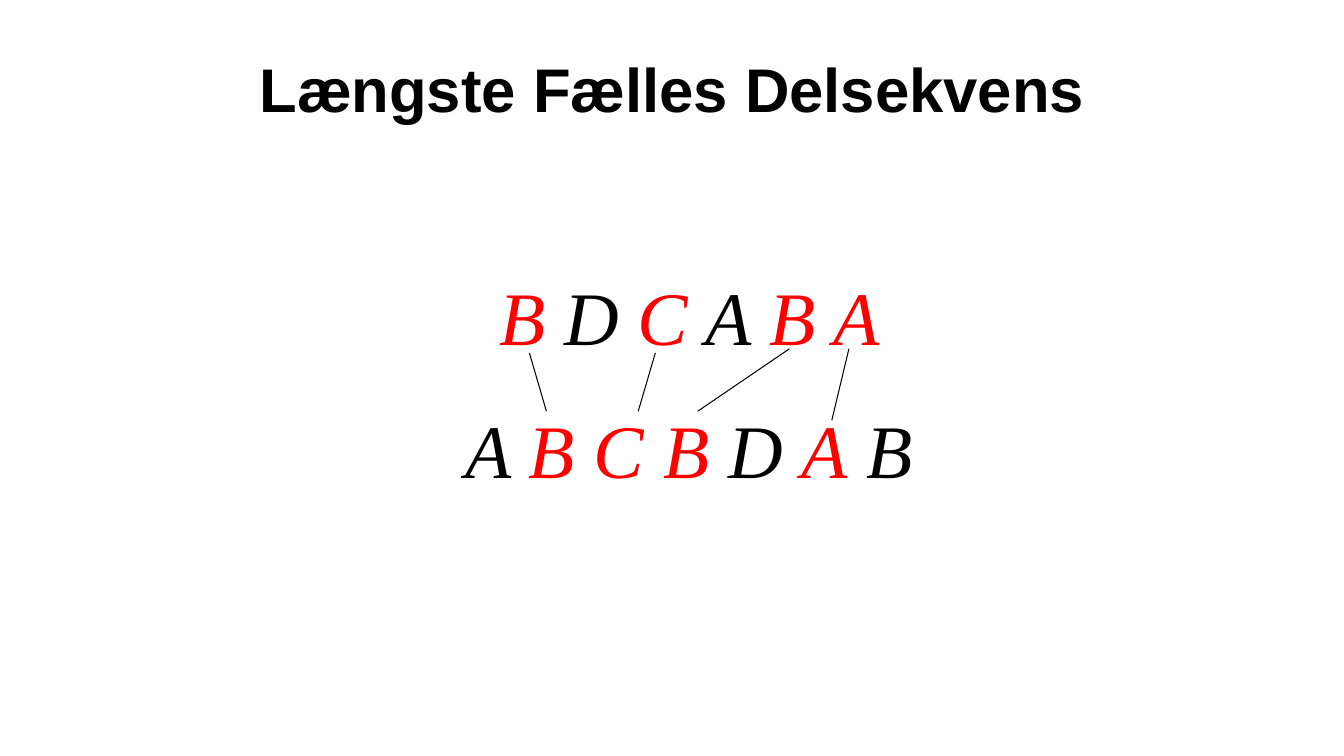
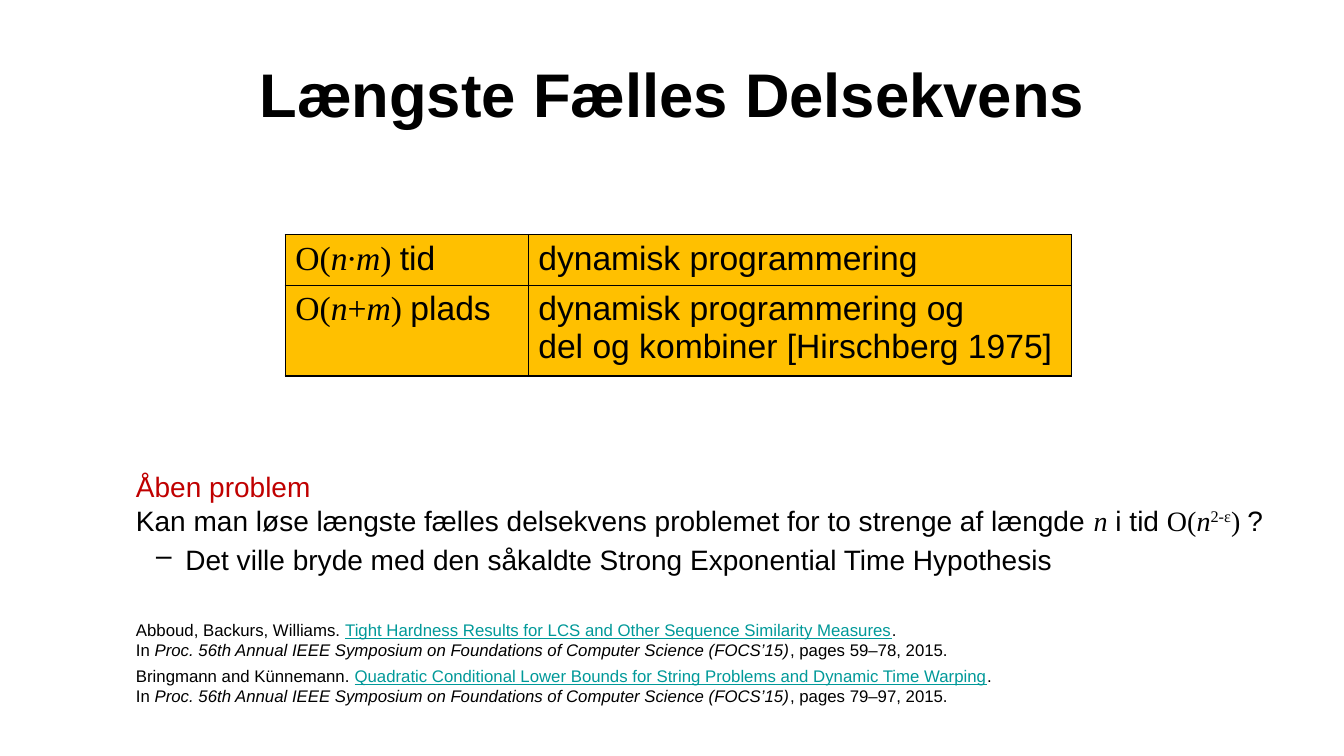
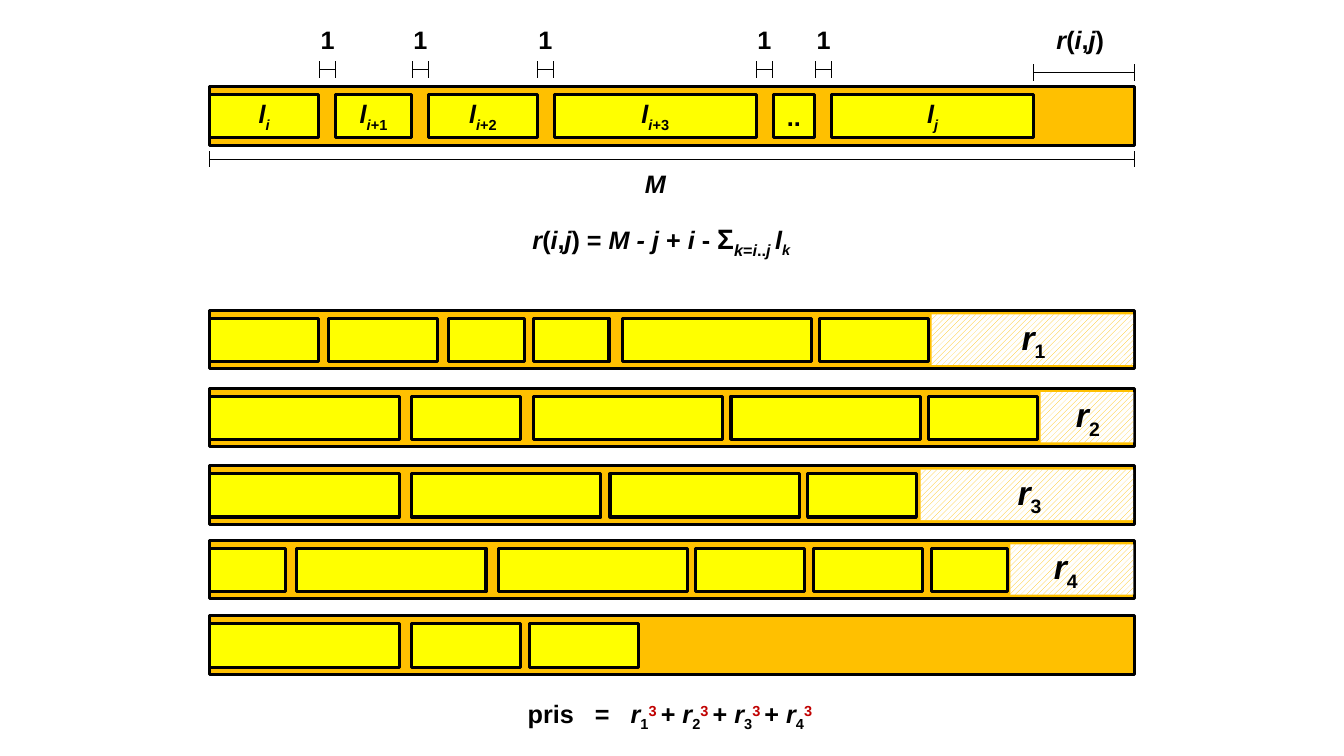
from copy import deepcopy

from lxml import etree
from pptx import Presentation
from pptx.dml.color import RGBColor
from pptx.enum.dml import MSO_PATTERN
from pptx.enum.shapes import MSO_CONNECTOR, MSO_SHAPE
from pptx.enum.text import MSO_ANCHOR, PP_ALIGN
from pptx.oxml.ns import qn
from pptx.util import Inches, Pt

RECTANGLE = MSO_SHAPE.RECTANGLE
STRAIGHT = MSO_CONNECTOR.STRAIGHT
HATCH = MSO_PATTERN.WIDE_UPWARD_DIAGONAL
LEFT, CENTER = PP_ALIGN.LEFT, PP_ALIGN.CENTER
TOP, MIDDLE = MSO_ANCHOR.TOP, MSO_ANCHOR.MIDDLE

BLACK, WHITE, RED, DARK_RED = "000000", "FFFFFF", "FF0000", "C00000"
ORANGE, YELLOW, TEAL = "FFC000", "FFFF00", "009999"
TITLE = "Længste Fælles Delsekvens"

# Each letter in the marks of a span switches on these format values
MARKS = {
    "b": {"bold": True},
    "i": {"italic": True},
    "u": {"underline": True},
    "t": {"name": "Times New Roman"},
    "r": {"color": RED},
    "d": {"color": DARK_RED},
    "l": {"color": TEAL},
    "_": {"baseline": -25000},
    "^": {"baseline": 30000},
    "w": {"spc": 1000},  # widens a single space
}


def rgb(value):
    return RGBColor.from_string(value)


class Slides:
    """The style of the deck and the slide being filled."""

    def __init__(self):
        self.deck = Presentation()
        self.deck.slide_width, self.deck.slide_height = Inches(13.33), Inches(7.5)
        self.page = None

    def new_page(self):
        self.page = self.deck.slides.add_slide(self.deck.slide_layouts[6])

    def add_spans(self, para, spans, size, marks=""):
        """Add spans, each a text or (text, marks); a newline is a line break."""
        for item in spans:
            text, extra = (item, "") if isinstance(item, str) else item
            values = {"name": "Arial", "size": Pt(size), "color": BLACK}
            for mark in marks + extra:
                values.update(MARKS[mark])
            for number, line in enumerate(text.split("\n")):
                if number:
                    para.add_line_break()
                    line_break = para._p[-1]
                span = para.add_run()
                span.text = line
                properties = span._r.get_or_add_rPr()
                for key, value in values.items():
                    if key == "color":
                        span.font.color.rgb = rgb(value)
                    elif key in ("baseline", "spc"):
                        properties.set(key, str(value))
                    else:
                        setattr(span.font, key, value)
                if number:
                    line_break.append(deepcopy(properties))
                if not line:
                    para._p.remove(span._r)

    def text(self, area, spans, size=18, marks="b", align=CENTER, anchor=TOP):
        box = self.page.shapes.add_textbox(*map(Inches, area))
        frame = box.text_frame
        frame.word_wrap, frame.vertical_anchor = True, anchor
        para = frame.paragraphs[0]
        para.alignment = align
        self.add_spans(para, spans, size, marks)
        return frame

    def add_para(self, frame, spans, size, marks="", align=LEFT, before=4):
        para = frame.add_paragraph()
        para.alignment, para.space_before = align, Pt(before)
        self.add_spans(para, spans, size, marks)
        return para

    def bullet(self, para, sign, indent, hanging):
        properties = para._p.get_or_add_pPr()
        properties.set("marL", str(Inches(indent)))
        properties.set("indent", str(-Inches(hanging)))
        etree.SubElement(properties, qn("a:buChar")).set("char", sign)

    def title(self, area):
        self.text(area, [TITLE], size=44, anchor=MIDDLE)

    def line(self, start, end):
        line = self.page.shapes.add_connector(STRAIGHT, *map(Inches, start + end))
        line.line.color.rgb, line.line.width = rgb(BLACK), Pt(0.75)
        etree.SubElement(line._element.spPr, qn("a:effectLst"))

    def bracket(self, left, right, middle):
        for x in (left, right):
            self.line((x, middle - 0.08), (x, middle + 0.08))
        self.line((left, middle), (right, middle))

    def block(self, area, color, spans=()):
        block = self.page.shapes.add_shape(RECTANGLE, *map(Inches, area))
        block.shadow.inherit = False
        block.fill.solid()
        block.fill.fore_color.rgb = rgb(color)
        block.line.color.rgb, block.line.width = rgb(BLACK), Pt(2.25)
        if spans:
            para = block.text_frame.paragraphs[0]
            para.alignment = CENTER
            self.add_spans(para, spans, 18, "b")

    def hatched(self, area):
        block = self.page.shapes.add_shape(RECTANGLE, *map(Inches, area))
        block.shadow.inherit = False
        block.fill.patterned()
        block.fill.pattern = HATCH
        block.fill.fore_color.rgb, block.fill.back_color.rgb = rgb(ORANGE), rgb(WHITE)
        block.line.fill.background()

    def table(self, left, top, widths, heights, rows):
        area = (left, top, sum(widths), sum(heights))
        table = self.page.shapes.add_table(
            len(rows), len(widths), *map(Inches, area)).table
        for column, width in zip(table.columns, widths):
            column.width = Inches(width)
        for row, height, contents in zip(table.rows, heights, rows):
            row.height = Inches(height)
            for cell, spans in zip(row.cells, contents):
                self.add_spans(cell.text_frame.paragraphs[0], spans, 24)
                self.borders(cell)
                cell.fill.solid()
                cell.fill.fore_color.rgb = rgb(ORANGE)

    def borders(self, cell):
        properties = cell._tc.get_or_add_tcPr()
        for side in ("a:lnL", "a:lnR", "a:lnT", "a:lnB"):
            edge = etree.SubElement(properties, qn(side))
            edge.set("w", str(Pt(1)))
            fill = etree.SubElement(edge, qn("a:solidFill"))
            etree.SubElement(fill, qn("a:srgbClr")).set("val", BLACK)


def sequences(slides):
    slides.new_page()
    slides.title((1.67, 0.33, 10, 1.08))
    upper = [("B", "r"), " D ", ("C", "r"), " A ", ("B A", "r")]
    lower = ["A ", ("B C B", "r"), " D ", ("A", "r"), " B"]
    frame = slides.text((3.17, 2.63, 7.33, 2.37), upper, 54, "ti")
    slides.add_para(frame, lower, 54, "ti", CENTER, before=30)
    # Lines between matching letters
    for start, end in [((5.25, 3.5), (5.42, 4.08)), ((6.5, 3.5), (6.33, 4.08)),
                       ((7.83, 3.46), (6.92, 4.08)), ((8.42, 3.46), (8.25, 4.17))]:
        slides.line(start, end)


def complexity(slides):
    slides.new_page()
    slides.title((0.67, 0.3, 12, 1.25))
    # Known bounds
    rows = [
        ([("O(", "t"), ("n", "ti"), ("∙", "t"), ("m", "ti"), (") ", "t"), "tid"],
         ["dynamisk programmering"]),
        ([("O(", "t"), ("n", "ti"), ("+", "t"), ("m", "ti"), (") ", "t"), "plads"],
         ["dynamisk programmering og\ndel og kombiner [Hirschberg 1975]"]),
    ]
    slides.table(2.83, 2.33, (2.41, 5.39), (0.47, 0.84), rows)
    # Open problem
    problem = [
        ("Åben problem\n", "d"),
        "Kan man løse længste fælles delsekvens problemet for to strenge af længde ",
        ("n", "ti"), " i tid ", ("O(", "t"), ("n", "ti"), ("2-ε", "t^"), (") ", "t"), "?",
    ]
    frame = slides.text((1.25, 4.61, 11.71, 2.89), problem, 20, "", LEFT)
    para = slides.add_para(
        frame, ["Det ville bryde med den såkaldte Strong Exponential Time Hypothesis"], 20)
    slides.bullet(para, "–", 0.49, 0.29)
    # References
    venue = "Proc. 56th Annual IEEE Symposium on Foundations of Computer Science (FOCS’15)"
    references = [
        ("Abboud, Backurs, Williams. ",
         "Tight Hardness Results for LCS and Other Sequence Similarity Measures",
         "59–78", 31),
        ("Bringmann and Künnemann. ",
         "Quadratic Conditional Lower Bounds for String Problems and Dynamic Time Warping",
         "79–97", 4),
    ]
    for authors, paper, pages, before in references:
        spans = [authors, (paper, "lu"), ".\nIn ", (venue, "i"), f", pages {pages}, 2015."]
        slides.add_para(frame, spans, 12, before=before)


def line_breaking(slides):
    slides.new_page()
    bar_left, bar_width, bar_height = 2.08, 9.17, 0.58
    bar_right = bar_left + bar_width
    r_of_i_j = [("r", "i"), "(", ("i", "i"), ",", ("j", "i"), ")"]

    # One line with its words
    slides.block((bar_left, 0.86, bar_width, bar_height), ORANGE)
    words = [(2.08, 1.08, "i", ""), (3.33, 0.75, "i", "+1"), (4.25, 1.08, "i", "+2"),
             (5.5, 2, "i", "+3"), (8.25, 2, "j", "")]
    for left, width, index, offset in words:
        spans = [("l", "i"), (index, "i_")] + ([(offset, "_")] if offset else [])
        slides.block((left, 0.94, width, 0.42), YELLOW, spans)
    slides.block((7.67, 0.94, 0.41, 0.42), YELLOW, [".."])

    # Measures around the line
    gap, label_width = 0.16, 1.42
    for left in (3.17, 4.09, 5.33, 7.5, 8.09):
        slides.bracket(left, left + gap, 0.69)
        slides.text((left + (gap - label_width) / 2, 0.19, label_width, 0.4), ["1"])
    slides.bracket(10.25, bar_right, 0.72)
    slides.text((10.38, 0.19, 0.75, 0.4), r_of_i_j, align=LEFT)
    slides.bracket(bar_left, bar_right, 1.58)
    slides.text((5.79, 1.62, label_width, 0.4), [("M", "i")])

    # Formula for the remaining space
    formula = r_of_i_j + [" = ", ("M - j ", "i"), "+ ", ("i", "i"), " - "]
    frame = slides.text((5.07, 2.15, 3.02, 0.44), formula)
    para = frame.paragraphs[0]
    slides.add_spans(para, ["Σ", ("k", "i_"), ("=", "_"), ("i", "i_"), ("..", "_"),
                            ("j ", "i_")], 20, "b")
    slides.add_spans(para, [("l", "i"), ("k ", "i_")], 18, "b")

    # Paragraph of lines: top, words as (left, width), rest left, label left
    short, medium, long = 0.75, 1.08, 1.88
    lines = [
        (3.08, [(2.08, medium), (3.26, medium), (4.45, short), (5.29, short),
                (6.17, long), (8.13, medium)], 9.24, 9.96),
        (3.85, [(2.08, long), (4.08, medium), (5.29, long), (7.25, long),
                (9.21, medium)], 10.32, 10.5),
        (4.62, [(2.08, long), (4.08, long), (6.05, long), (8.01, medium)], 9.13, 9.92),
        (5.36, [(2.08, short), (2.94, long), (4.94, long), (6.9, medium),
                (8.07, medium), (9.24, short)], 10.02, 10.28),
        (6.11, [(2.08, long), (4.08, medium), (5.25, medium)], None, None),
    ]
    for number, (top, blocks, rest, label) in enumerate(lines, 1):
        slides.block((bar_left, top, bar_width, bar_height), ORANGE)
        for left, width in blocks:
            slides.block((left, top + 0.08, width, 0.43), YELLOW)
        if rest:
            slides.hatched((rest, top + 0.04, bar_right - 0.01 - rest, 0.5))
            slides.text((label, top + 0.01, 0.58, 0.5),
                        [("r", "i"), (str(number), "_")], 24)

    # Price
    price = ["pris", (" ", "w"), "=", (" ", "w")]
    for number in range(1, 5):
        price += ["+ "] if number > 1 else []
        price += [("r", "i"), (str(number), "_"), ("3 ", "d^")]
    slides.text((3.6, 6.88, 6.13, 0.4), price)


def main():
    slides = Slides()
    sequences(slides)
    complexity(slides)
    line_breaking(slides)
    slides.deck.save("out.pptx")


if __name__ == "__main__":
    main()
